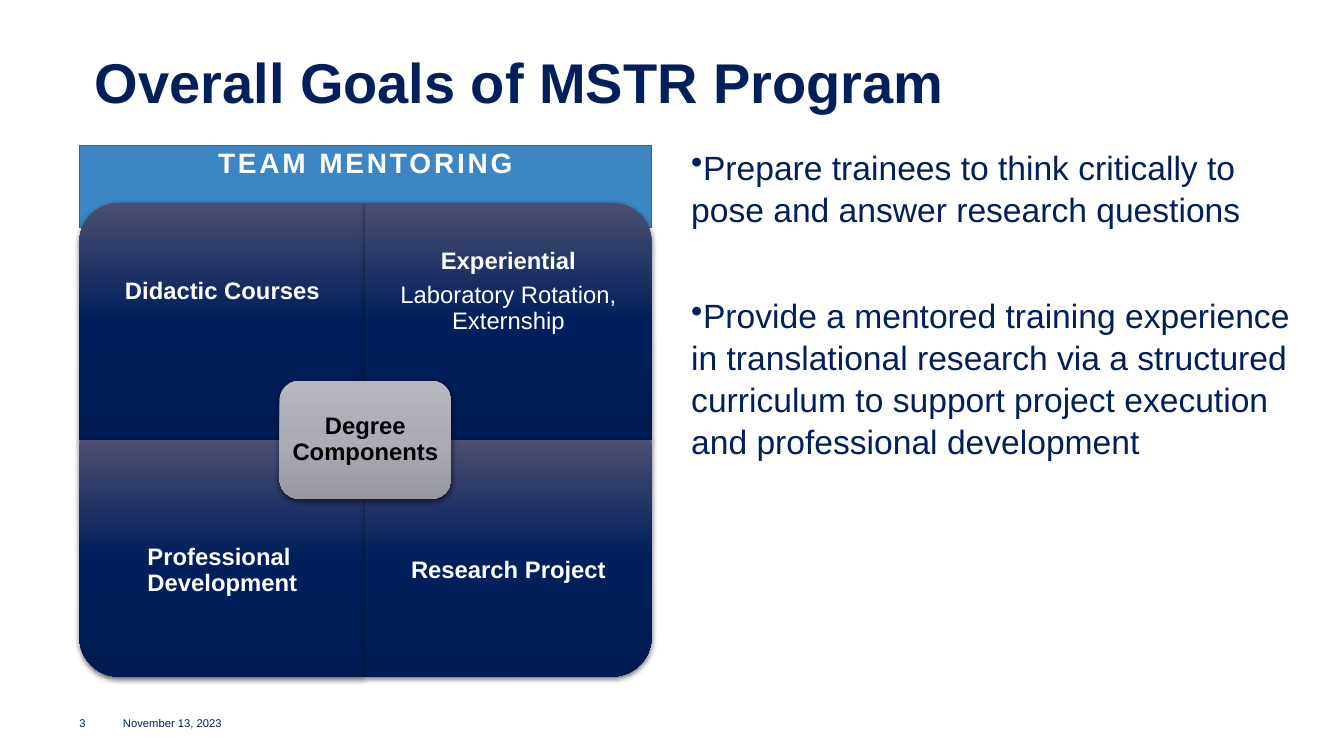
from lxml import etree
from pptx import Presentation
from pptx.dml.color import RGBColor
from pptx.enum.shapes import MSO_SHAPE as SHAPE
from pptx.enum.text import MSO_ANCHOR as ANCHOR, PP_ALIGN as ALIGN
from pptx.oxml import parse_xml
from pptx.oxml.ns import qn
from pptx.util import Cm, Pt

COLORS = {"navy": "011F5B", "white": "FFFFFF", "black": "000000",
          "banner": "3C86C3", "banner_line": "2C6390"}
QUADRANT = ("4B4F71", "001F5C", "001B52")
CENTRE = ("B5B6BE", "ABACB6", "9798A2")
FONT = "Arial"
A_NS = "http://schemas.openxmlformats.org/drawingml/2006/main"


def rgb(name):
    return RGBColor.from_string(COLORS[name])


def write(tf, *lines, size=17, color="navy", bold=False, align=ALIGN.LEFT,
          anchor=ANCHOR.TOP, inset=0, spacing=None, before=0, after=0,
          bullet=None, track=None):
    """Fill a text frame, one paragraph per line."""
    tf.word_wrap = True
    tf.vertical_anchor = anchor
    tf.margin_left = tf.margin_right = tf.margin_top = tf.margin_bottom = Cm(inset)
    for i, line in enumerate(lines):
        p = tf.paragraphs[0] if i == 0 else tf.add_paragraph()
        p.text = line
        p.alignment = align
        p.line_spacing = spacing
        p.space_before, p.space_after = Pt(before), Pt(after)
        if bullet:
            pPr = p._p.get_or_add_pPr()
            pPr.set("marL", "0")
            pPr.set("indent", "0")
            etree.SubElement(pPr, qn("a:buChar")).set("char", bullet)
        for r in p.runs:
            r.font.name, r.font.size, r.font.bold = FONT, Pt(size), bold
            r.font.color.rgb = rgb(color)
            if track:
                r._r.get_or_add_rPr().set("spc", str(track * 100))


class Deck:
    def __init__(self, width, height):
        self.prs = Presentation()
        self.prs.slide_width, self.prs.slide_height = Cm(width), Cm(height)
        self.slide = None

    def title(self, text, x, y, w, h, **fmt):
        self.slide = self.prs.slides.add_slide(self.prs.slide_layouts[5])
        sp = self.slide.shapes.title
        sp.left, sp.top, sp.width, sp.height = map(Cm, (x, y, w, h))
        write(sp.text_frame, text, **fmt)
        return sp

    def text(self, lines, x, y, w, h, **fmt):
        sp = self.slide.shapes.add_textbox(*map(Cm, (x, y, w, h)))
        write(sp.text_frame, *lines, **fmt)
        return sp

    def box(self, kind, x, y, w, h, fill=None, line=None):
        sp = self.slide.shapes.add_shape(kind, *map(Cm, (x, y, w, h)))
        sp.shadow.inherit = False
        if fill:
            sp.fill.solid()
            sp.fill.fore_color.rgb = rgb(fill)
        if line:
            sp.line.color.rgb = rgb(line)
            sp.line.width = Pt(1)
        else:
            sp.line.fill.background()
        return sp

    def tile(self, kind, x, y, w, h, stops, turn=0):
        """Shaded tile with a soft shadow; a turned tile still covers x, y, w, h."""
        if turn % 180:
            x, y, w, h = x + (w - h) / 2, y + (h - w) / 2, h, w
        sp = self.box(kind, x, y, w, h)
        sp.rotation = turn
        marks = "".join(f'<a:gs pos="{i * 50000}"><a:srgbClr val="{c}"/></a:gs>'
                        for i, c in enumerate(stops))
        spPr = sp._element.spPr
        spPr.find(qn("a:prstGeom")).addnext(parse_xml(
            f'<a:gradFill xmlns:a="{A_NS}" rotWithShape="0"><a:gsLst>{marks}</a:gsLst>'
            '<a:lin ang="5400000" scaled="0"/></a:gradFill>'))
        spPr.find(qn("a:effectLst")).append(parse_xml(
            f'<a:outerShdw xmlns:a="{A_NS}" blurRad="57150" dist="19050" dir="5400000" '
            'algn="ctr" rotWithShape="0"><a:srgbClr val="000000">'
            '<a:alpha val="63000"/></a:srgbClr></a:outerShdw>'))
        return sp


def main():
    deck = Deck(33.87, 19.05)
    left, top, cell_w, cell_h = 2, 5.11, 7.21, 5.97

    # Title
    deck.title("Overall Goals of MSTR Program", left, 1.37, 29.87, 1.55, size=40,
               bold=True, spacing=0.9, anchor=ANCHOR.BOTTOM)
    deck.slide.shapes.title.text_frame.margin_left = Cm(0.39)

    # Footer
    for text, x, w in (("November 13, 2023", 3.1, 7.62), ("3", left, 1.09)):
        deck.text([text], x, 17.88, w, 0.51, size=8, after=6, anchor=ANCHOR.BOTTOM)

    # Goals
    goals = deck.text(
        ["Prepare trainees to think critically to pose and answer research questions",
         "Provide a mentored training experience in translational research via a "
         "structured curriculum to support project execution and professional development"],
        17.42, 3.66, 15.11, 13.39, size=24, spacing=1.04, before=2.5, after=6, bullet="•")
    goals.text_frame.paragraphs[1].space_before = Pt(40)

    # Banner
    banner = deck.box(SHAPE.RECTANGLE, left, 3.66, 2 * cell_w, 2.08,
                      "banner", "banner_line")
    write(banner.text_frame, "TEAM MENTORING", size=20, color="white", bold=True,
          align=ALIGN.CENTER, before=12, after=3, track=2)

    # Quadrants: column, row, turn, label top and height, label lines
    label = dict(bold=True, align=ALIGN.CENTER, anchor=ANCHOR.MIDDLE,
                 spacing=0.9, after=6)
    upper, lower = (top, 4.47), (12.57, 3.62)
    quadrants = (
        (0, 0, 270, upper, ["Didactic Courses"]),
        (1, 0, 0, upper, ["Experiential", "Laboratory Rotation, Externship"]),
        (0, 1, 180, lower, ["Professional \vDevelopment"]),
        (1, 1, 90, lower, ["Research Project"]),
    )
    for col, row, turn, (label_top, label_h), lines in quadrants:
        x = left + col * cell_w
        deck.tile(SHAPE.ROUND_1_RECTANGLE, x, top + row * cell_h, cell_w, cell_h,
                  QUADRANT, turn)
        sp = deck.text(lines, x, label_top, cell_w, label_h, color="white",
                       inset=0.32, **label)
        for p in sp.text_frame.paragraphs[1:]:
            p.runs[0].font.bold = False

    # Centre tile
    w, h = 4.33, 2.98
    centre = deck.tile(SHAPE.ROUNDED_RECTANGLE, left + cell_w - w / 2,
                       top + cell_h - h / 2, w, h, CENTRE)
    write(centre.text_frame, "Degree Components", color="black", inset=0.1, **label)

    deck.prs.save("out.pptx")


if __name__ == "__main__":
    main()
